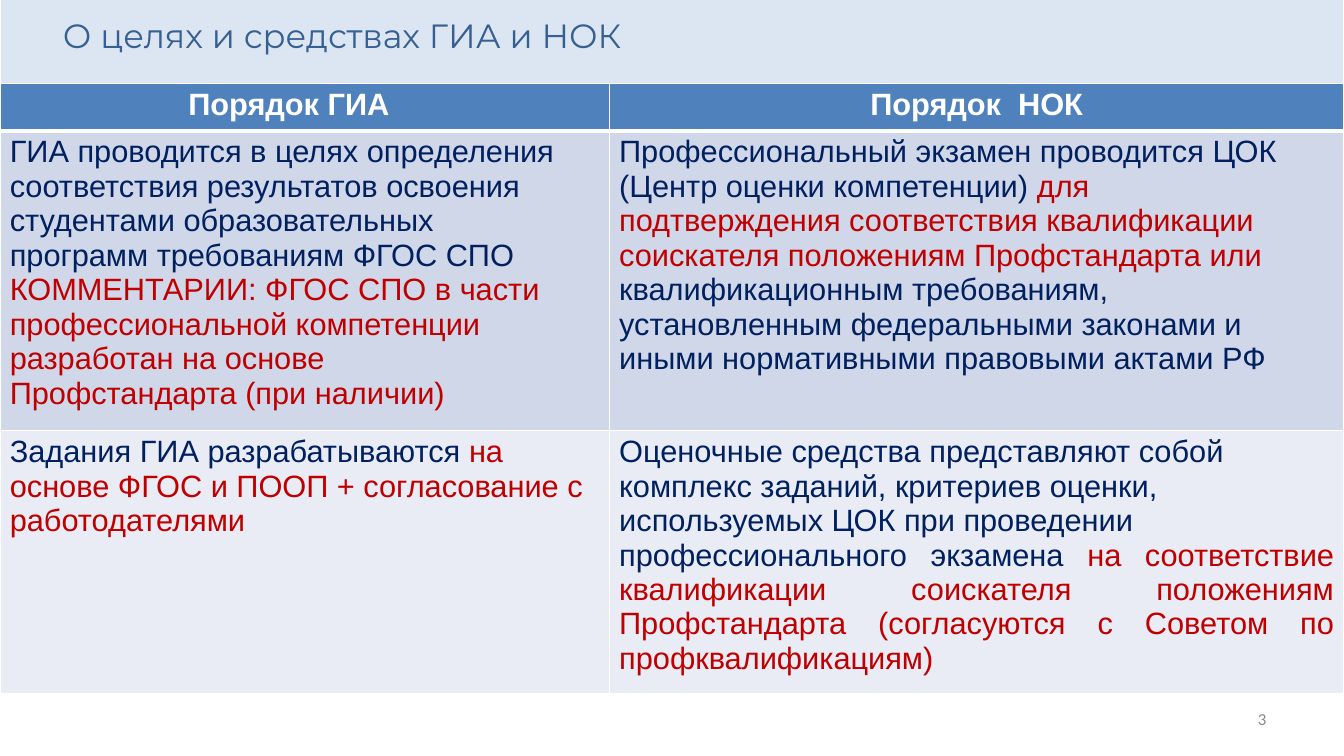
from lxml.etree import SubElement
from pptx import Presentation
from pptx.dml.color import RGBColor
from pptx.enum.shapes import MSO_SHAPE as SHAPE
from pptx.enum.text import MSO_ANCHOR as ANCHOR, MSO_AUTO_SIZE as AUTO_SIZE, PP_ALIGN as ALIGN
from pptx.oxml.ns import qn
from pptx.util import Pt

COLORS = {
    "white": "FFFFFF", "banner": "DCE6F2", "title": "376092",
    "header": "4F81BC", "band": "D0D7E8", "light": "E9ECF4",
    "navy": "002060", "red": "C00000", "gray": "888888",
}


def rgb(name):
    return RGBColor.from_string(COLORS[name])


def write_paragraph(frame, runs, first=True, font="Arial", size=22, bold=False,
                    align=ALIGN.LEFT, before=0, left=0, right=0, line=None):
    """Write (text, color) runs as one paragraph of the frame."""
    paragraph = frame.paragraphs[0] if first else frame.add_paragraph()
    paragraph.alignment = align
    paragraph.space_before = Pt(before)
    if line:
        paragraph.line_spacing = Pt(line)
    properties = paragraph._p.get_or_add_pPr()
    properties.set("marL", str(Pt(left)))
    properties.set("marR", str(Pt(right)))
    properties.set("indent", "0")
    for text, color in runs:
        run = paragraph.add_run()
        run.text = text
        run.font.name, run.font.size, run.font.bold = font, Pt(size), bold
        run.font.color.rgb = rgb(color)


presentation = Presentation()
presentation.slide_width, presentation.slide_height = Pt(960), Pt(540)
slide = presentation.slides.add_slide(presentation.slide_layouts[5])
shapes = slide.shapes

# Banner behind the title
banner = shapes.add_shape(SHAPE.RECTANGLE, Pt(0), Pt(-2), Pt(960), Pt(70))
banner.shadow.inherit = False
banner.fill.solid()
banner.fill.fore_color.rgb = rgb("banner")
banner.line.color.rgb = rgb("white")
banner.line.width = Pt(2)

# Title, brought in front of the banner
title = shapes.title
banner._element.addnext(title._element)
title.left, title.top, title.width, title.height = Pt(44), Pt(9.5), Pt(436), Pt(31)

# Slide number
number = shapes.add_textbox(Pt(898.5), Pt(509.5), Pt(6), Pt(12))

for shape, top_margin in ((title, 1), (number, 0)):
    frame = shape.text_frame
    frame.margin_left = frame.margin_right = frame.margin_bottom = 0
    frame.margin_top = Pt(top_margin)
    frame.vertical_anchor = ANCHOR.TOP
    frame.word_wrap = True
    frame.auto_size = AUTO_SIZE.SHAPE_TO_FIT_TEXT
write_paragraph(title.text_frame, [("О целях и средствах ГИА и НОК", "title")],
                font="Montserrat", size=24, before=1, left=1)
write_paragraph(number.text_frame, [("3", "gray")], font="Calibri", size=12, line=11.4)

# Table contents: each cell is a list of (runs, paragraph format)
ROWS = [
    [
        [([("Порядок ГИА", "white")], {"left": 134.5, "bold": True})],
        [([("Порядок  НОК", "white")], {"align": ALIGN.CENTER, "bold": True})],
    ],
    [
        [
            ([("ГИА проводится в целях определения соответствия результатов освоения "
               "студентами образовательных", "navy")], {"left": 7, "right": 18}),
            ([("программ требованиям ФГОС СПО ", "navy"),
              ("КОММЕНТАРИИ: ФГОС СПО в части", "red")], {"left": 7, "right": 18}),
            ([("профессиональной компетенции разработан на основе "
               "Профстандарта (при наличии)", "red")], {"left": 7, "right": 50}),
        ],
        [
            ([("Профессиональный экзамен проводится ЦОК (Центр оценки компетенции) ", "navy"),
              ("для подтверждения соответствия квалификации соискателя положениям "
               "Профстандарта или ", "red"),
              ("квалификационным требованиям, установленным федеральными законами и",
               "navy")], {"left": 7, "right": 20}),
            ([("иными нормативными правовыми актами РФ", "navy")], {"left": 7, "right": 20}),
        ],
    ],
    [
        [
            ([("Задания ГИА разрабатываются ", "navy"),
              ("на основе ФГОС и ПООП + согласование с работодателями", "red")],
             {"left": 7, "right": 18}),
        ],
        [
            ([("Оценочные средства представляют собой комплекс заданий, "
               "критериев оценки,", "navy")], {"left": 7, "right": 20}),
            ([("используемых ЦОК при проведении", "navy")], {"left": 7, "right": 20}),
            ([("профессионального экзамена ", "navy"),
              ("на соответствие квалификации соискателя положениям Профстандарта "
               "(согласуются с Советом по профквалификациям)", "red")],
             {"left": 7, "right": 7, "align": ALIGN.JUSTIFY}),
        ],
    ],
]
COLUMN_WIDTHS = [435.3, 524.7]
ROW_HEIGHTS = [34, 214, 187.5]
ROW_FILLS = ["header", "band", "light"]
ROW_RULES = [1, 3, 1, 1]  # widths of the horizontal borders, top to bottom

# Table
table = shapes.add_table(3, 2, Pt(0), Pt(59.5), Pt(960), Pt(sum(ROW_HEIGHTS))).table
for column, width in zip(table.columns, COLUMN_WIDTHS):
    column.width = Pt(width)
for row, height in zip(table.rows, ROW_HEIGHTS):
    row.height = Pt(height)

for row_index, row in enumerate(ROWS):
    for column_index, paragraphs in enumerate(row):
        cell = table.cell(row_index, column_index)
        cell.margin_left = cell.margin_right = cell.margin_bottom = 0
        cell.margin_top = Pt(3)
        for index, (runs, style) in enumerate(paragraphs):
            write_paragraph(cell.text_frame, runs, first=index == 0,
                            before=3 if index == 0 else 0, **style)

        # Borders come before the fill in the cell properties
        borders = {"lnL": 1, "lnR": 1, "lnT": ROW_RULES[row_index],
                   "lnB": ROW_RULES[row_index + 1]}
        properties = cell._tc.get_or_add_tcPr()
        for tag, width in borders.items():
            border = SubElement(properties, qn(f"a:{tag}"), w=str(Pt(width)))
            border_fill = SubElement(border, qn("a:solidFill"))
            SubElement(border_fill, qn("a:srgbClr"), val=COLORS["white"])
        cell.fill.solid()
        cell.fill.fore_color.rgb = rgb(ROW_FILLS[row_index])

presentation.save("out.pptx")
